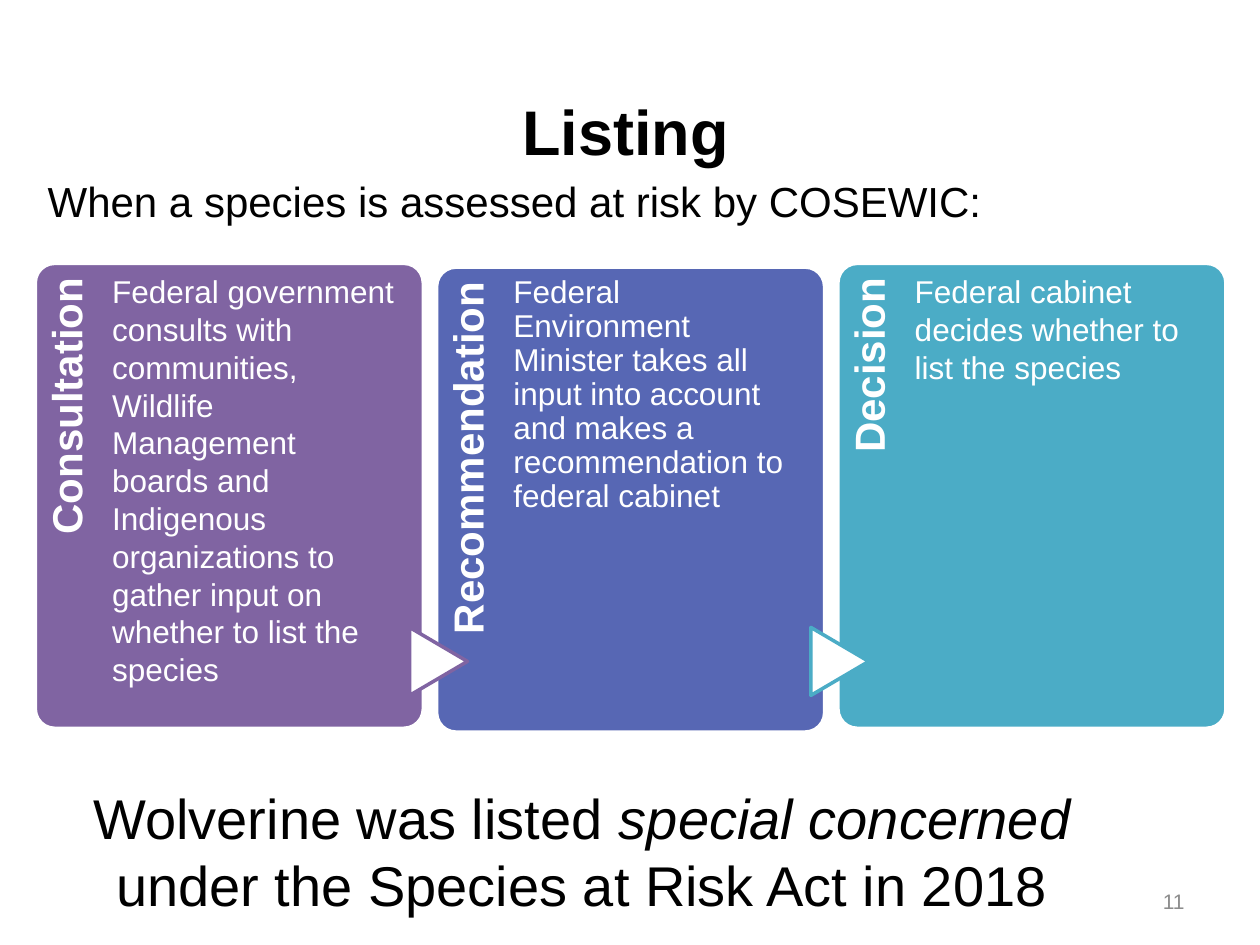
"""Build the Listing slide: three linked step cards between a heading and a closing statement."""
import pptx
import pptx.util
import pptx.dml.color
import pptx.enum.shapes
import pptx.enum.text

COLORS = {"purple": "8064A2", "indigo": "5767B4", "teal": "4BACC6",
          "white": "FFFFFF", "black": "000000", "gray": "8C8C8C"}
ALIGN = pptx.enum.text.PP_ALIGN
ANCHOR = pptx.enum.text.MSO_ANCHOR
SHAPES = pptx.enum.shapes.MSO_SHAPE

presentation = pptx.Presentation()
presentation.slide_width = pptx.util.Inches(10)
presentation.slide_height = pptx.util.Inches(7.5)
slide = presentation.slides.add_slide(presentation.slide_layouts[6])
column = presentation.slide_width / 100
row = presentation.slide_height / 100


def add_text(area, runs, size, color, align=ALIGN.LEFT, anchor=ANCHOR.TOP,
             bold=None, spacing=None, insets=(0.1, 0.05, 0.1, 0.05), rotation=0):
    left, top, width, height = area
    box = slide.shapes.add_textbox(round(left * column), round(top * row),
                                   round(width * column), round(height * row))
    box.rotation = rotation
    frame = box.text_frame
    frame.word_wrap = True
    frame.vertical_anchor = anchor
    frame.margin_left, frame.margin_top, frame.margin_right, frame.margin_bottom = map(
        pptx.util.Inches, insets)
    paragraph = frame.paragraphs[0]
    paragraph.alignment = align
    paragraph.line_spacing = spacing
    paragraph.font.name = "Arial"
    paragraph.font.size = pptx.util.Pt(size)
    paragraph.font.bold = bold
    paragraph.font.color.rgb = pptx.dml.color.RGBColor.from_string(COLORS[color])
    for text, italic in runs:
        run = paragraph.add_run()
        run.text = text
        run.font.italic = italic


def add_shape(kind, area, fill, line, rotation=0):
    left, top, width, height = area
    shape = slide.shapes.add_shape(kind, round(left * column), round(top * row),
                                   round(width * column), round(height * row))
    shape.rotation = rotation
    shape.shadow.inherit = False
    shape.fill.solid()
    shape.fill.fore_color.rgb = pptx.dml.color.RGBColor.from_string(COLORS[fill])
    shape.line.color.rgb = pptx.dml.color.RGBColor.from_string(COLORS[line])
    shape.line.width = pptx.util.Pt(2)
    return shape


steps = [
    ("Consultation", "Federal government consults with communities, Wildlife Management boards "
     "and Indigenous organizations to gather input on whether to list the species",
     "purple", None, 27.87, None),
    ("Recommendation", "Federal Environment Minister takes all input into account and makes "
     "a recommendation to federal cabinet", "indigo", "purple", 28.27, 0.9),
    ("Decision", "Federal cabinet decides whether to list the species",
     "teal", "teal", 27.87, None),
]
for index, (name, detail, color, arrow_color, top, spacing) in enumerate(steps):
    left = 2.8 + 31.85 * index
    card = add_shape(SHAPES.ROUNDED_RECTANGLE, (left, top, 30.8, 49.2), color, "white")
    card.adjustments[0] = 0.05
    add_text((left - 12.1, top + 16, 30.3, 8.27), [(name, None)], 24, "white", ALIGN.RIGHT,
             bold=True, spacing=0.9, insets=(0, 0.09, 0.12, 0), rotation=270)
    if arrow_color:
        add_shape(SHAPES.FLOWCHART_EXTRACT, (left - 2.55, 66.93, 5.4, 6.13),
                  "white", arrow_color, rotation=90)
    add_text((left + 6.1, top, 22.9, 49.2), [(detail, None)], 18, "white",
             spacing=spacing, insets=(0, 0.07, 0, 0))

add_text((71.7, 92.67, 23.3, 5.33), [("11", None)], 12, "gray", ALIGN.RIGHT, ANCHOR.MIDDLE)
add_text((9.8, 8.67, 79.7, 9.87), [("Listing", None)], 36, "black", ALIGN.CENTER,
         ANCHOR.BOTTOM, bold=True, spacing=0.9)
add_text((2.8, 18.53, 94.5, 74.13), [("When a species is assessed at risk by COSEWIC:", None)],
         24, "black", spacing=0.9)
add_text((2.8, 82.27, 86.8, 15.73),
         [("Wolverine was listed ", None), ("special concerned ", True),
          ("under the Species at Risk Act in 2018", None)], 32, "black", ALIGN.CENTER)

presentation.save("out.pptx")
